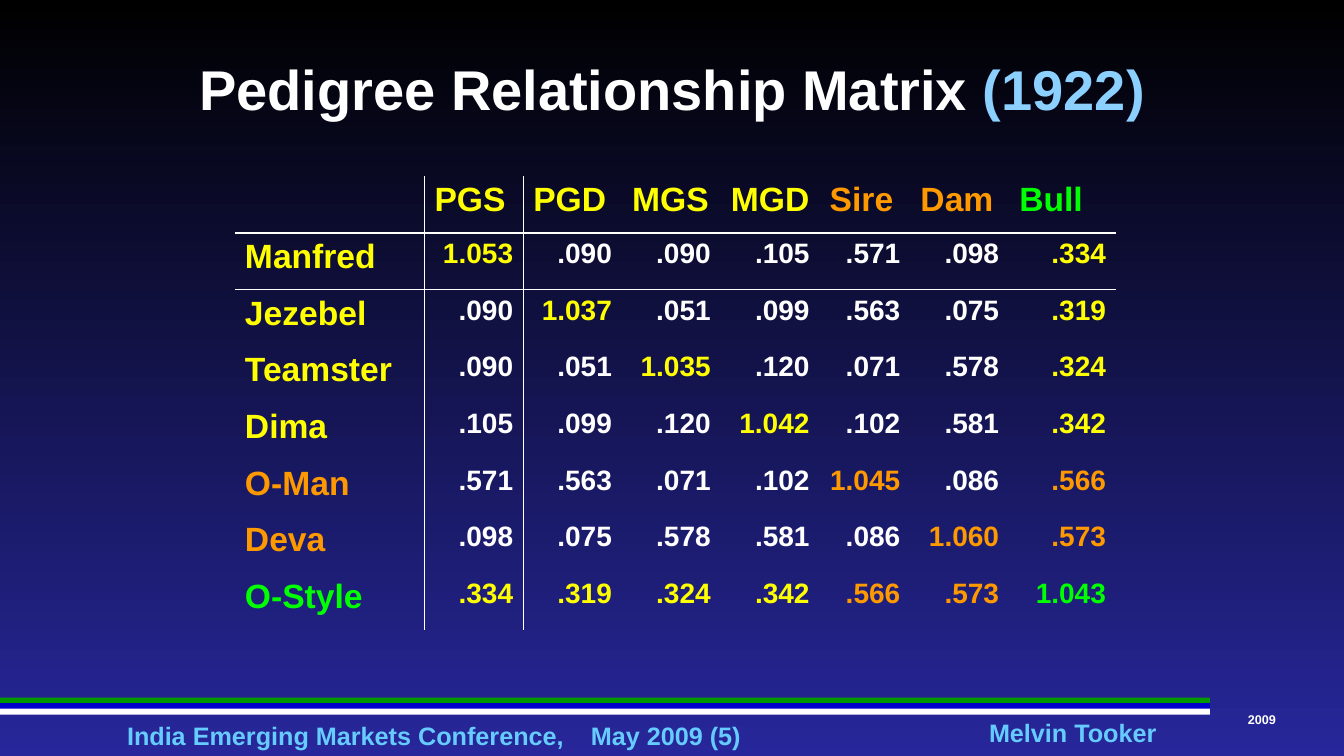
from dataclasses import dataclass

from lxml import etree
from pptx import Presentation
from pptx.dml.color import RGBColor
from pptx.enum.shapes import MSO_SHAPE
from pptx.enum.text import MSO_ANCHOR, PP_ALIGN
from pptx.oxml.ns import qn
from pptx.util import Inches, Pt

RECT = MSO_SHAPE.RECTANGLE
MIDDLE = MSO_ANCHOR.MIDDLE
LEFT, CENTER, RIGHT = PP_ALIGN.LEFT, PP_ALIGN.CENTER, PP_ALIGN.RIGHT


@dataclass(frozen=True)
class Theme:
    font: str = "Arial"
    white: str = "FFFFFF"
    grandparent: str = "FFFF00"
    parent: str = "FF9900"
    bull: str = "00FF00"
    year: str = "8CD0FF"
    footer: str = "66CCFF"
    bg_top: str = "000000"
    bg_bottom: str = "27279B"
    bands: tuple = ("009900", "0000CC", "FFFFFF")
    title_size: int = 40
    label_size: int = 24
    value_size: int = 20
    footer_size: int = 18
    note_size: int = 9


T = Theme()
NO_GRID_STYLE = "{2D5ABB26-0587-4C30-8999-92F81FD0307C}"


def add_run(p, text, size, color):
    r = p.add_run()
    r.text = text
    r.font.name, r.font.size, r.font.bold = T.font, Pt(size), True
    r.font.color.rgb = RGBColor.from_string(color)


def add_text(box, runs, size, align, wrap=True):
    """Add a margin-free, vertically centred line made of (text, colour) runs."""
    tf = s.shapes.add_textbox(*map(Inches, box)).text_frame
    tf.word_wrap, tf.vertical_anchor = wrap, MIDDLE
    tf.margin_left = tf.margin_top = tf.margin_right = tf.margin_bottom = 0
    p = tf.paragraphs[0]
    p.alignment = align
    for text, color in runs:
        add_run(p, text, size, color)
    return p


prs = Presentation()
prs.slide_width, prs.slide_height = Inches(13.33), Inches(7.5)
s = prs.slides.add_slide(prs.slide_layouts[6])

bg = s.background.fill
bg.gradient()
bg.gradient_angle = 270
for stop, color in zip(bg.gradient_stops, (T.bg_top, T.bg_bottom)):
    stop.color.rgb = RGBColor.from_string(color)

# Footer
conference = add_text((1.26, 7.15, 7.85, 0.3),
                      [("India Emerging Markets Conference,\tMay 2009 (5)", T.footer)],
                      T.footer_size, LEFT)
tabs = etree.SubElement(conference._p.get_or_add_pPr(), qn("a:tabLst"))
etree.SubElement(tabs, qn("a:tab"), pos=str(Inches(4.6)), algn="l")
add_text((9.8, 7.12, 1.68, 0.3), [("Melvin Tooker", T.footer)],
         T.footer_size, CENTER, wrap=False)
add_text((12.33, 7.06, 0.37, 0.15), [("2009", T.white)], T.note_size, CENTER)

for i, color in enumerate(T.bands):
    band = s.shapes.add_shape(RECT, 0, Inches(6.92 + i * 0.055), Inches(12), Inches(0.06))
    band.shadow.inherit = False
    band.fill.solid()
    band.fill.fore_color.rgb = RGBColor.from_string(color)
    band.line.fill.background()

# Title
add_text((0.33, 0.25, 12.67, 1.25),
         [("Pedigree Relationship Matrix ", T.white), ("(1922)", T.year)],
         T.title_size, CENTER)

# Relationship matrix: symmetric, so only the lower triangle is listed
animals = [
    ("PGS", "Manfred", T.grandparent),
    ("PGD", "Jezebel", T.grandparent),
    ("MGS", "Teamster", T.grandparent),
    ("MGD", "Dima", T.grandparent),
    ("Sire", "O-Man", T.parent),
    ("Dam", "Deva", T.parent),
    ("Bull", "O-Style", T.bull),
]
lower = [
    ["1.053"],
    [".090", "1.037"],
    [".090", ".051", "1.035"],
    [".105", ".099", ".120", "1.042"],
    [".571", ".563", ".071", ".102", "1.045"],
    [".098", ".075", ".578", ".581", ".086", "1.060"],
    [".334", ".319", ".324", ".342", ".566", ".573", "1.043"],
]
col_widths = [1.88, 0.98, 0.98, 0.98, 0.98, 0.9, 0.98, 1.06]
n = len(animals)

frame = s.shapes.add_table(n + 1, n + 1, Inches(2.33), Inches(1.75),
                           Inches(8.75), Inches(4.5))
table = frame.table
table.first_row = table.horz_banding = False
for style in frame.element.iter(qn("a:tableStyleId")):
    style.text = NO_GRID_STYLE
for column, width in zip(table.columns, col_widths):
    column.width = Inches(width)

for row in range(n + 1):
    for col in range(n + 1):
        cell = table.cell(row, col)
        borders = [("a:lnL", col == 1), ("a:lnR", col == 0),
                   ("a:lnT", row == 1), ("a:lnB", row == 0)]
        for tag, shown in borders:
            if shown:
                ln = etree.SubElement(cell._tc.get_or_add_tcPr(), qn(tag), w=str(Pt(1)))
                fill = etree.SubElement(ln, qn("a:solidFill"))
                etree.SubElement(fill, qn("a:srgbClr"), val=T.white)
        cell.fill.background()
        if row == col == 0:
            continue
        p = cell.text_frame.paragraphs[0]
        if row == 0 or col == 0:
            role, name, color = animals[max(row, col) - 1]
            add_run(p, role if row == 0 else name, T.label_size, color)
        else:
            low, high = sorted((row - 1, col - 1))
            highlighted = low == high or high == n - 1
            p.alignment = RIGHT
            add_run(p, lower[high][low], T.value_size,
                    animals[low][2] if highlighted else T.white)

prs.save("out.pptx")
